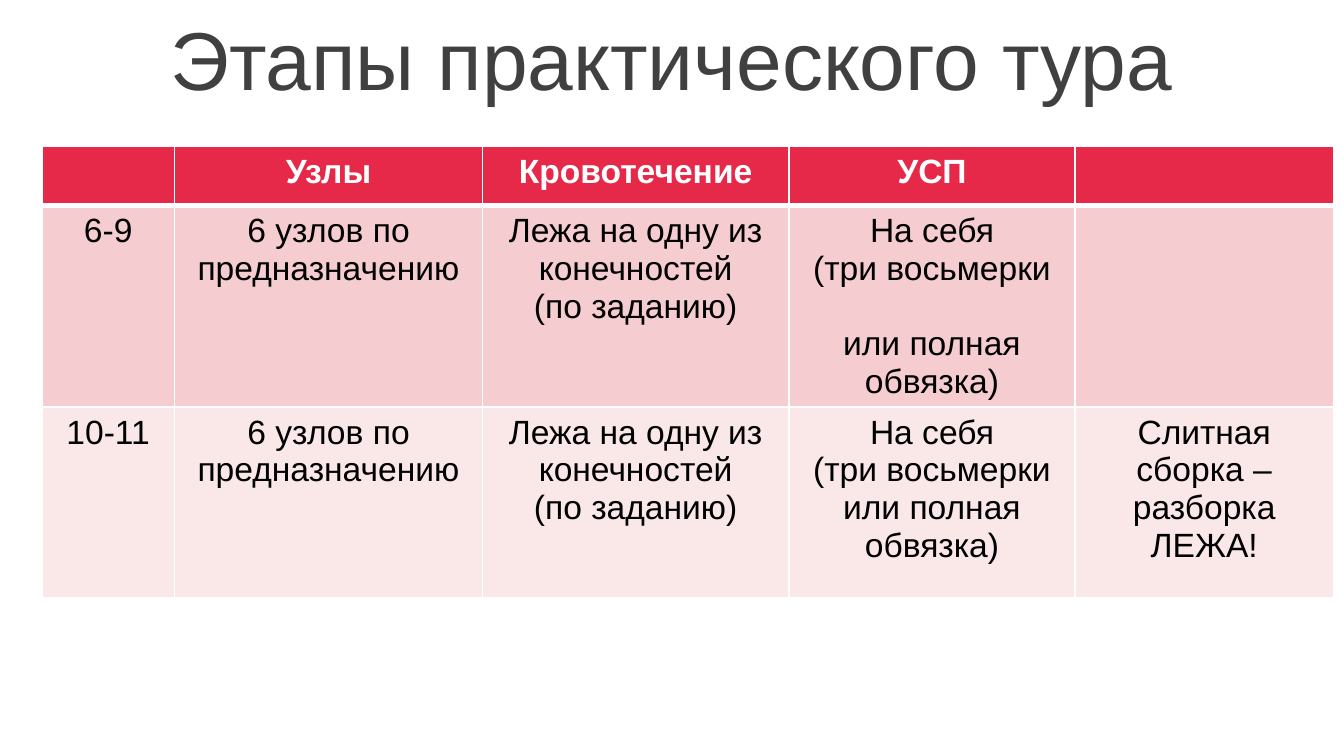
import pptx
import pptx.util
import pptx.dml.color
import pptx.enum.text
import pptx.oxml
import pptx.oxml.ns

Cm = pptx.util.Cm
Pt = pptx.util.Pt
ALIGN = pptx.enum.text.PP_ALIGN
ANCHOR = pptx.enum.text.MSO_ANCHOR

TITLE = "Этапы практического тура"
KNOTS = ["6 узлов по", "предназначению"]
BLEED = ["Лежа на одну из", "конечностей", "(по заданию)"]
ROWS = [
    [[], ["Узлы"], ["Кровотечение"], ["УСП"], []],
    [["6-9"], KNOTS, BLEED,
     ["На себя", "(три восьмерки", "или полная", "обвязка)"], []],
    [["10-11"], KNOTS, BLEED,
     ["На себя", "(три восьмерки или полная", "обвязка)"],
     ["Слитная", "сборка –", "разборка", "ЛЕЖА!"]],
]
WIDTHS = [2.51, 5.82, 5.79, 5.41, 4.88]
HEIGHTS = [1.12, 3.61, 3.61]
COLORS = {"title": "404040", "head": "E62949", "odd": "F5CDD0",
          "even": "FAE8E9", "light": "FFFFFF", "dark": "000000"}
FILLS = ["head", "odd", "even"]
FONT = "Arial"
GAPS = {(1, 3, 1): 20}


def color(name):
    return pptx.dml.color.RGBColor.from_string(COLORS[name])


def style(part, size, tint, bold=False):
    part.alignment = ALIGN.CENTER
    for run in part.runs:
        run.font.name = FONT
        run.font.size = Pt(size)
        run.font.bold = bold
        run.font.color.rgb = color(tint)


def border(cell, row):
    props = cell._tc.get_or_add_tcPr()
    points = {"L": 1, "R": 1, "T": 3 if row == 1 else 1, "B": 3 if row == 0 else 1}
    for side, width in points.items():
        props.append(pptx.oxml.parse_xml(
            f'<a:ln{side} {pptx.oxml.ns.nsdecls("a")} w="{Pt(width)}">'
            f'<a:solidFill><a:srgbClr val="{COLORS["light"]}"/></a:solidFill>'
            f'</a:ln{side}>'))


def add_title(slide):
    title = slide.shapes.title
    title.left, title.top, title.width, title.height = Cm(0), Cm(0), Cm(25.4), Cm(2.18)
    frame = title.text_frame
    frame.text = TITLE
    frame.vertical_anchor = ANCHOR.MIDDLE
    style(frame.paragraphs[0], 44, "title")


def add_grid(slide):
    grid = slide.shapes.add_table(
        len(ROWS), len(WIDTHS), Cm(0.79), Cm(2.77),
        Cm(sum(WIDTHS)), Cm(sum(HEIGHTS))).table
    for col, width in zip(grid.columns, WIDTHS):
        col.width = Cm(width)
    for row, height in zip(grid.rows, HEIGHTS):
        row.height = Cm(height)
    for r, row in enumerate(ROWS):
        for c, lines in enumerate(row):
            cell = grid.cell(r, c)
            border(cell, r)
            cell.fill.solid()
            cell.fill.fore_color.rgb = color(FILLS[r])
            cell.text_frame.text = "\n".join(lines)
            for p, part in enumerate(cell.text_frame.paragraphs):
                style(part, 18, "dark" if r else "light", r == 0)
                if (r, c, p) in GAPS:
                    part.space_after = Pt(GAPS[r, c, p])


def main():
    deck = pptx.Presentation()
    deck.slide_width, deck.slide_height = Cm(25.4), Cm(14.29)
    slide = deck.slides.add_slide(deck.slide_layouts[5])
    add_title(slide)
    add_grid(slide)
    deck.save("out.pptx")


if __name__ == "__main__":
    main()
